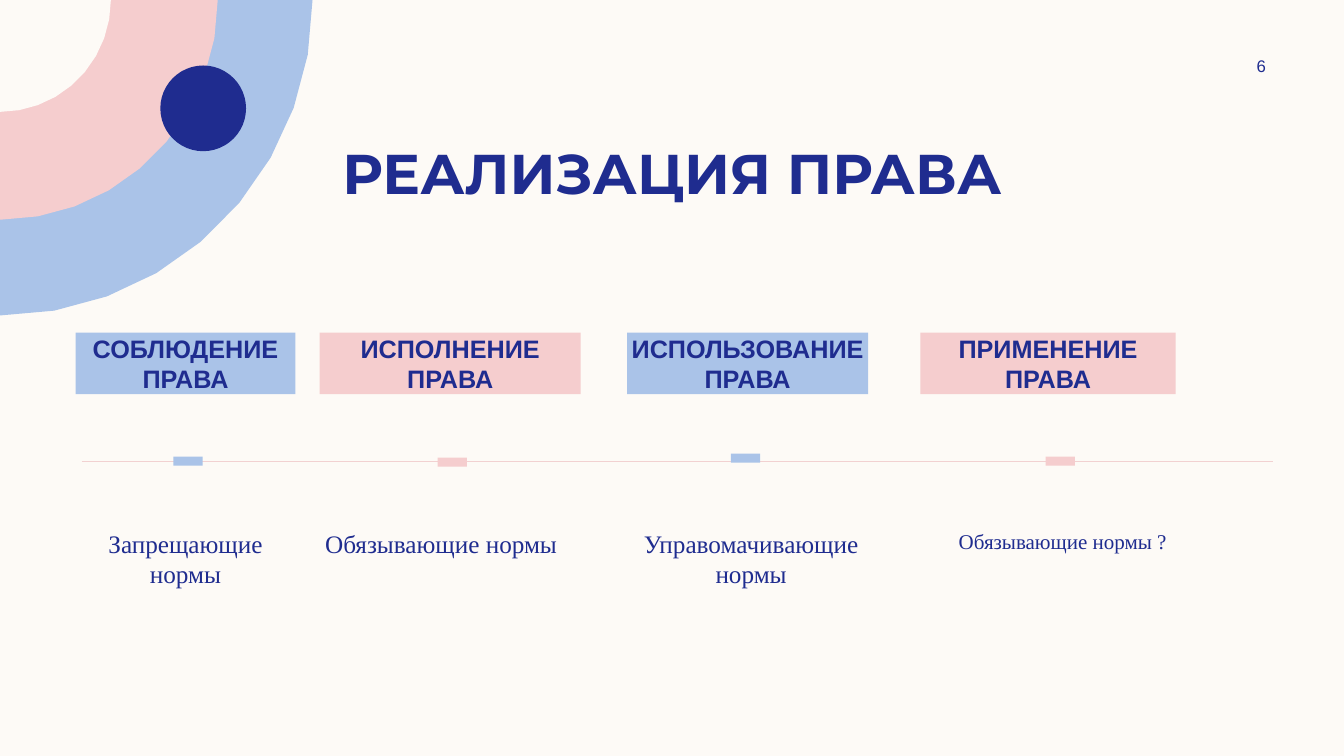
"""Build a slide that sets four forms of realising law on a timeline."""
import math

import pptx
import pptx.dml.color
import pptx.enum.shapes
import pptx.enum.text
import pptx.oxml
import pptx.util

Inches = pptx.util.Inches
Shapes = pptx.enum.shapes.MSO_SHAPE
Anchor = pptx.enum.text.MSO_ANCHOR

THEME = {
    "cream": "FDFAF6", "blue": "AAC3E8", "pink": "F5CDCE", "navy": "1F2C8F", "line": "F2D1D1",
    "title": {"name": "Montserrat", "size": 40, "bold": True},
    "number": {"name": "Arial", "size": 12, "bold": False},
    "heading": {"name": "Arial", "size": 18, "bold": True},
    "norm": {"name": "Times New Roman", "size": 18, "bold": False},
    "small_norm": {"name": "Times New Roman", "size": 15, "bold": False},
}


def paint(shape, color):
    """Give a shape a flat fill without outline or shadow."""
    shape.shadow.inherit = False
    shape.fill.solid()
    shape.fill.fore_color.rgb = pptx.dml.color.RGBColor.from_string(THEME[color])
    shape.line.fill.background()


def write(shape, text, style, anchor, side, vertical):
    """Put one centred paragraph into a shape."""
    frame = shape.text_frame
    layout = {
        "word_wrap": True, "vertical_anchor": anchor,
        "margin_left": Inches(side), "margin_right": Inches(side),
        "margin_top": Inches(vertical), "margin_bottom": Inches(vertical),
    }
    for name, value in layout.items():
        setattr(frame, name, value)
    paragraph = frame.paragraphs[0]
    paragraph.alignment = pptx.enum.text.PP_ALIGN.CENTER
    run = paragraph.add_run()
    run.text = text
    for name, value in THEME[style].items():
        setattr(run.font, name, pptx.util.Pt(value) if name == "size" else value)
    run.font.color.rgb = pptx.dml.color.RGBColor.from_string(THEME["navy"])


presentation = pptx.Presentation()
presentation.slide_width = Inches(13.33)
presentation.slide_height = Inches(7.5)
slide = presentation.slides.add_slide(presentation.slide_layouts[6])
slide.background.fill.solid()
slide.background.fill.fore_color.rgb = pptx.dml.color.RGBColor.from_string(THEME["cream"])

for width, height, color in [(3.1, 3.13, "blue"), (2.16, 2.18, "pink"), (1.1, 1.11, "cream")]:
    angles = [math.radians(degree) for degree in range(0, 91, 10)]
    arc = [(Inches(width * math.cos(a)), Inches(height * math.sin(a))) for a in angles]
    builder = slide.shapes.build_freeform(0, 0)
    builder.add_line_segments(arc, close=True)
    paint(builder.convert_to_shape(), color)

dot = slide.shapes.add_shape(Shapes.OVAL, Inches(1.59), Inches(0.65), Inches(0.85), Inches(0.85))
paint(dot, "navy")

timeline = slide.shapes.add_connector(
    pptx.enum.shapes.MSO_CONNECTOR.STRAIGHT, Inches(0.81), Inches(4.58), Inches(12.63), Inches(4.58))
timeline.line.color.rgb = pptx.dml.color.RGBColor.from_string(THEME["line"])
timeline.line.width = pptx.util.Pt(1)
timeline._element.spPr.append(pptx.oxml.parse_xml(
    '<a:effectLst xmlns:a="http://schemas.openxmlformats.org/drawingml/2006/main"/>'))

title = slide.shapes.add_textbox(Inches(0.83), Inches(1.33), Inches(11.67), Inches(0.84))
write(title, "РЕАЛИЗАЦИЯ ПРАВА", "title", Anchor.TOP, 0.1, 0.05)
number = slide.shapes.add_textbox(Inches(11.97), Inches(0.5), Inches(1.08), Inches(0.3))
write(number, "6", "number", Anchor.MIDDLE, 0.1, 0.05)

forms = [
    ("СОБЛЮДЕНИЕ ПРАВА", "blue", 0.75, 2.18, 1.72, 4.53, "Запрещающие нормы", 0.75, 2.18, "norm"),
    ("ИСПОЛНЕНИЕ ПРАВА", "pink", 3.17, 2.59, 4.34, 4.54, "Обязывающие нормы", 3.17, 2.41, "norm"),
    ("ИСПОЛЬЗОВАНИЕ ПРАВА", "blue", 6.22, 2.39, 7.25, 4.5, "Управомачивающие нормы", 6.22, 2.46, "norm"),
    ("ПРИМЕНЕНИЕ ПРАВА", "pink", 9.13, 2.53, 10.37, 4.53, "Обязывающие нормы ?", 9.31, 2.46, "small_norm"),
]
for heading, color, left, width, marker_left, marker_top, norm, norm_left, norm_width, style in forms:
    box = slide.shapes.add_shape(Shapes.RECTANGLE, Inches(left), Inches(3.3), Inches(width), Inches(0.61))
    paint(box, color)
    write(box, heading, "heading", Anchor.MIDDLE, 0, 0)
    marker = slide.shapes.add_shape(
        Shapes.RECTANGLE, Inches(marker_left), Inches(marker_top), Inches(0.29), Inches(0.09))
    paint(marker, color)
    label = slide.shapes.add_textbox(Inches(norm_left), Inches(5.19), Inches(norm_width), Inches(0.87))
    write(label, norm, style, Anchor.TOP, 0, 0.05)

presentation.save("out.pptx")
